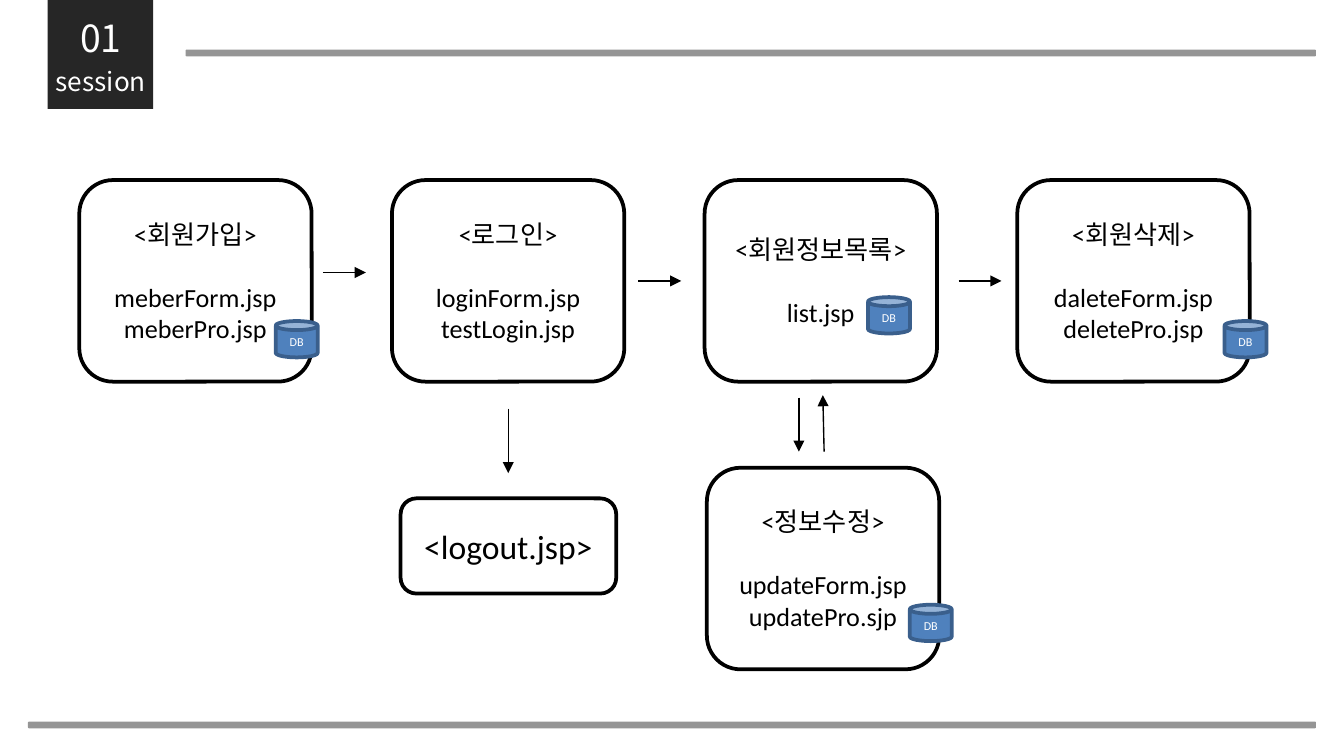
from dataclasses import dataclass

from lxml.etree import SubElement
from pptx import Presentation
from pptx.dml.color import RGBColor
from pptx.enum.shapes import MSO_CONNECTOR, MSO_SHAPE as Preset
from pptx.enum.text import MSO_ANCHOR as Anchor, PP_ALIGN as Align
from pptx.oxml.ns import qn
from pptx.shapes.autoshape import Shape
from pptx.slide import Slide
from pptx.text.text import TextFrame
from pptx.util import Pt

LATIN_FONT = "Calibri"
HEADER_FONT = "Noto Sans CJK KR"
BLACK, WHITE = "000000", "FFFFFF"
DARK, GRAY = "262626", "808080"
BLUE, BLUE_EDGE = "4F81BD", "3A5F8C"

COLUMNS = [42.5 + 167.5 * index for index in range(4)]
TOP_ROW = 96.5
PAGE_WIDTH, PAGE_HEIGHT = 124.5, 108


@dataclass
class PageBox:
    left: float
    top: float
    lines: list[str]
    width: float = PAGE_WIDTH
    height: float = PAGE_HEIGHT
    size: float = 14


@dataclass
class Arrow:
    x1: float
    y1: float
    x2: float
    y2: float


@dataclass
class Database:
    left: float
    top: float


@dataclass
class Bar:
    left: float
    top: float
    width: float


PAGES = [
    PageBox(COLUMNS[0], TOP_ROW, ["<회원가입>", "meberForm.jsp", "meberPro.jsp"]),
    PageBox(COLUMNS[1], TOP_ROW, ["<로그인>", "loginForm.jsp", "testLogin.jsp"]),
    PageBox(COLUMNS[2], TOP_ROW, ["<회원정보목록>", "list.jsp"]),
    PageBox(COLUMNS[3], TOP_ROW, ["<회원삭제>", "daleteForm.jsp", "deletePro.jsp"]),
    PageBox(378.7, 250.6, ["<정보수정>", "updateForm.jsp", "updatePro.sjp"]),
    PageBox(214.6, 267, ["<logout.jsp>"], width=115.5, height=51, size=18),
]
ARROWS = [
    Arrow(173, 146, 196, 146),
    Arrow(342, 150.5, 365, 150.5),
    Arrow(513.5, 150.5, 536.5, 150.5),
    Arrow(272.3, 219, 272.3, 253.5),
    Arrow(428, 213, 428, 242),
    Arrow(441.5, 242, 440.8, 211.7),
]
DATABASES = [
    Database(147.7, 172),
    Database(465, 159.2),
    Database(656, 172),
    Database(487.4, 324),
]
BARS = [Bar(15, 386.6, 690), Bar(99.4, 26.6, 605.6)]


def color(hex_string: str) -> RGBColor:
    return RGBColor.from_string(hex_string)


def add_filled_shape(slide: Slide, preset: Preset, left: float, top: float,
                     width: float, height: float, fill: str,
                     edge: str | None = None) -> Shape:
    shape = slide.shapes.add_shape(preset, Pt(left), Pt(top), Pt(width), Pt(height))
    shape.shadow.inherit = False
    shape.fill.solid()
    shape.fill.fore_color.rgb = color(fill)
    if edge:
        shape.line.color.rgb = color(edge)
        shape.line.width = Pt(2)
    else:
        shape.line.fill.background()
    return shape


def write_lines(frame: TextFrame, lines: list[str], size: float,
                font_color: str, font_name: str = LATIN_FONT) -> None:
    """Centre the lines, with one line of space after the heading."""
    frame.word_wrap = True
    frame.vertical_anchor = Anchor.MIDDLE
    frame.margin_left = frame.margin_right = 0
    frame.margin_top = frame.margin_bottom = 0
    for index, line in enumerate(lines):
        paragraph = frame.add_paragraph() if index else frame.paragraphs[0]
        paragraph.text = line
        paragraph.alignment = Align.CENTER
        if index == 1:
            paragraph.space_before = Pt(17)
        paragraph.font.name = font_name
        paragraph.font.size = Pt(size)
        paragraph.font.color.rgb = color(font_color)


def draw_bar(slide: Slide, bar: Bar) -> None:
    shape = add_filled_shape(slide, Preset.ROUNDED_RECTANGLE, bar.left, bar.top,
                             bar.width, 3.6, GRAY)
    fill_color = shape._element.spPr.find(qn("a:solidFill"))[0]
    SubElement(fill_color, qn("a:alpha"), val="83000")


def draw_page(slide: Slide, page: PageBox) -> None:
    shape = add_filled_shape(slide, Preset.ROUNDED_RECTANGLE, page.left, page.top,
                             page.width, page.height, WHITE, BLACK)
    write_lines(shape.text_frame, page.lines, page.size, BLACK)


def draw_database(slide: Slide, database: Database) -> None:
    shape = add_filled_shape(slide, Preset.CAN, database.left, database.top,
                             22.5, 19.5, BLUE, BLUE_EDGE)
    write_lines(shape.text_frame, ["DB"], 6.5, WHITE)


def draw_arrow(slide: Slide, arrow: Arrow) -> None:
    connector = slide.shapes.add_connector(
        MSO_CONNECTOR.STRAIGHT, Pt(arrow.x1), Pt(arrow.y1), Pt(arrow.x2), Pt(arrow.y2))
    connector.line.color.rgb = color(BLACK)
    connector.line.width = Pt(0.75)
    SubElement(connector.line._get_or_add_ln(), qn("a:tailEnd"), type="triangle")
    SubElement(connector._element.spPr, qn("a:effectLst"))


def draw_header(slide: Slide) -> None:
    add_filled_shape(slide, Preset.RECTANGLE, 25.5, 0, 56.5, 58.3, DARK)
    number = slide.shapes.add_textbox(Pt(3), Pt(4.3), Pt(102), Pt(32))
    write_lines(number.text_frame, ["01"], 20, WHITE, HEADER_FONT)
    title = slide.shapes.title
    title.left, title.top, title.width, title.height = Pt(3), Pt(31), Pt(102), Pt(24.5)
    write_lines(title.text_frame, ["session"], 14, WHITE, HEADER_FONT)
    slide.shapes._spTree.append(title._element)  # in front of the dark tab


def main() -> None:
    presentation = Presentation()
    presentation.slide_width, presentation.slide_height = Pt(720), Pt(405)
    slide = presentation.slides.add_slide(presentation.slide_layouts[5])
    for bar in BARS:
        draw_bar(slide, bar)
    draw_header(slide)
    for page in PAGES:
        draw_page(slide, page)
    for arrow in ARROWS:
        draw_arrow(slide, arrow)
    for database in DATABASES:
        draw_database(slide, database)
    presentation.save("out.pptx")


if __name__ == "__main__":
    main()
